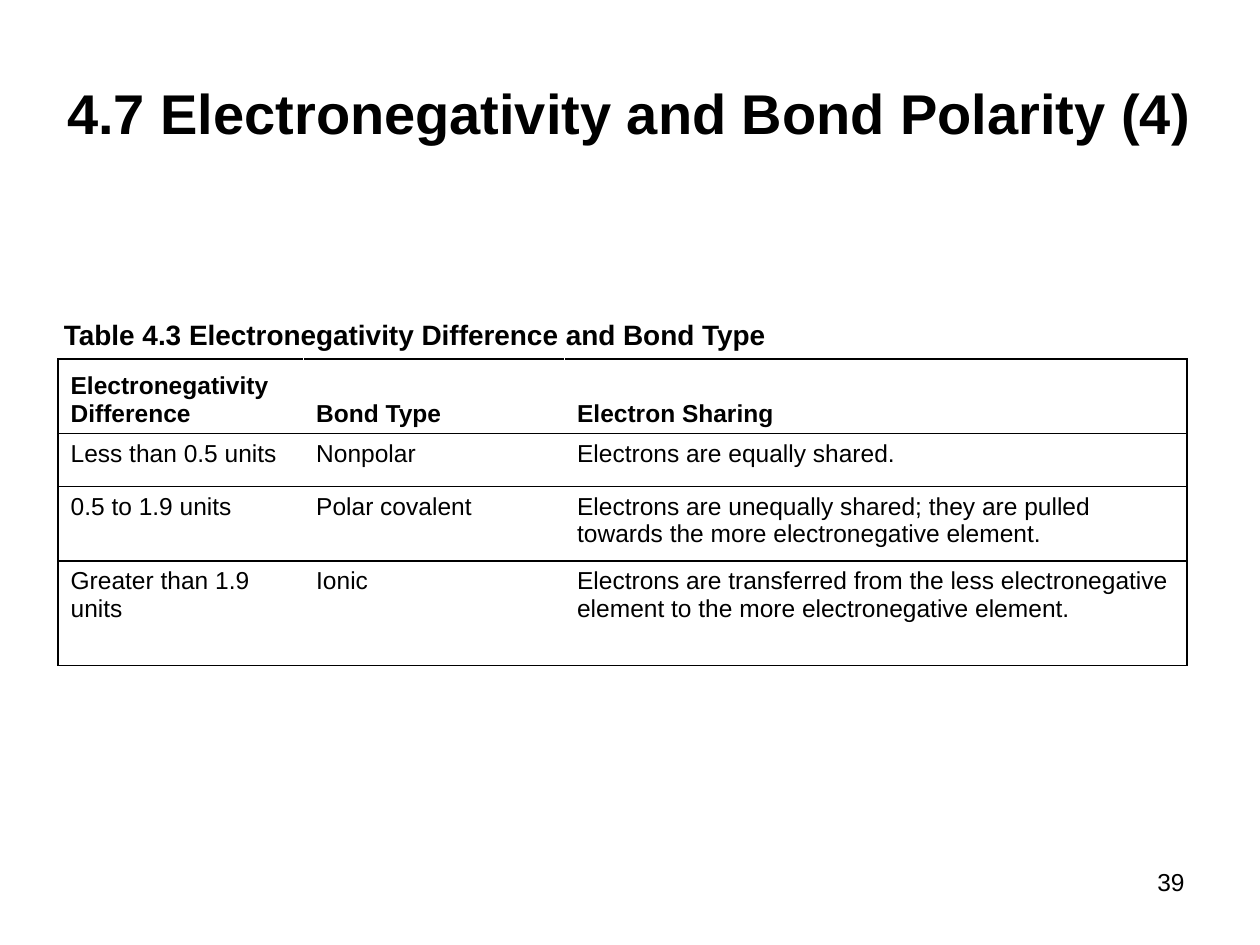
from dataclasses import dataclass

from lxml import etree
from pptx import Presentation
from pptx.dml.color import RGBColor
from pptx.enum.text import MSO_ANCHOR, MSO_AUTO_SIZE, PP_ALIGN
from pptx.oxml.ns import qn
from pptx.util import Cm, Pt

LEFT, CENTER, RIGHT = PP_ALIGN.LEFT, PP_ALIGN.CENTER, PP_ALIGN.RIGHT
TOP, MIDDLE, BOTTOM = MSO_ANCHOR.TOP, MSO_ANCHOR.MIDDLE, MSO_ANCHOR.BOTTOM
NO_AUTOFIT = MSO_AUTO_SIZE.NONE
TITLE_ONLY = 5
FONT = "Arial"
COLORS = {"ink": "000000", "paper": "FFFFFF"}


@dataclass
class Bond:
    difference: str
    kind: str
    sharing: str
    height: float
    header: bool = False


COLUMN_WIDTHS = (4.95, 5.26, 12.55)
BONDS = (
    Bond("Electronegativity Difference", "Bond Type", "Electron Sharing", 1.5, True),
    Bond("Less than 0.5 units", "Nonpolar", "Electrons are equally shared.", 1.07),
    Bond("0.5 to 1.9 units", "Polar covalent",
         "Electrons are unequally shared; they are pulled towards "
         "the more electronegative element.", 1.5),
    Bond("Greater than 1.9 units", "Ionic",
         "Electrons are transferred from the less electronegative element "
         "to the more electronegative element.", 2.11),
)


def write_text(frame, text: str, *, size: float, bold: bool = False,
               align=LEFT, anchor=TOP, before: float = 0) -> None:
    frame.word_wrap = True
    frame.vertical_anchor = anchor
    para = frame.paragraphs[0]
    para.alignment = align
    para.space_before = Pt(before)
    span = para.add_run()
    span.text = text
    span.font.name = FONT
    span.font.size = Pt(size)
    span.font.bold = bold
    span.font.color.rgb = RGBColor.from_string(COLORS["ink"])


def add_label(page, text: str, left: float, top: float,
              width: float, height: float, **style) -> None:
    box = page.shapes.add_textbox(Cm(left), Cm(top), Cm(width), Cm(height))
    write_text(box.text_frame, text, **style)


def set_borders(cell, left: str, right: str) -> None:
    properties = cell._tc.get_or_add_tcPr()
    sides = {"a:lnL": left, "a:lnR": right, "a:lnT": "ink", "a:lnB": "ink"}
    for index, (tag, color) in enumerate(sides.items()):
        line = etree.Element(qn(tag), w=str(Pt(1)))
        fill = etree.SubElement(line, qn("a:solidFill"))
        etree.SubElement(fill, qn("a:srgbClr"), val=COLORS[color])
        properties.insert(index, line)


def add_bond_table(page, left: float, top: float) -> None:
    width = sum(COLUMN_WIDTHS)
    height = sum(bond.height for bond in BONDS)
    table = page.shapes.add_table(len(BONDS), len(COLUMN_WIDTHS), Cm(left),
                                  Cm(top), Cm(width), Cm(height)).table
    for column, column_width in zip(table.columns, COLUMN_WIDTHS):
        column.width = Cm(column_width)
    last = len(COLUMN_WIDTHS) - 1
    for row, bond in enumerate(BONDS):
        table.rows[row].height = Cm(bond.height)
        for column, text in enumerate((bond.difference, bond.kind, bond.sharing)):
            cell = table.cell(row, column)
            write_text(cell.text_frame, text, size=14, bold=bond.header)
            cell.vertical_anchor = BOTTOM if bond.header else TOP
            cell.fill.solid()
            cell.fill.fore_color.rgb = RGBColor.from_string(COLORS["paper"])
            set_borders(cell, "ink" if column == 0 else "paper",
                        "ink" if column == last else "paper")


def main() -> None:
    deck = Presentation()
    deck.slide_width, deck.slide_height = Cm(25.4), Cm(19.05)
    page = deck.slides.add_slide(deck.slide_layouts[TITLE_ONLY])

    title = page.shapes.title
    title.left, title.top = Cm(0.89), Cm(1.27)
    title.width, title.height = Cm(23.6), Cm(1.98)
    title.text_frame.auto_size = NO_AUTOFIT
    write_text(title.text_frame, "4.7 Electronegativity and Bond Polarity (4)",
               size=32, bold=True, align=CENTER, anchor=MIDDLE)

    add_label(page, "Table 4.3 Electronegativity Difference and Bond Type",
              1.04, 6.27, 15.62, 1.07, size=16, bold=True, before=3.2)
    add_bond_table(page, 1.17, 7.24)
    add_label(page, "39", 21.03, 17.35, 3.1, 0.86, size=14, align=RIGHT)

    deck.save("out.pptx")


if __name__ == "__main__":
    main()
